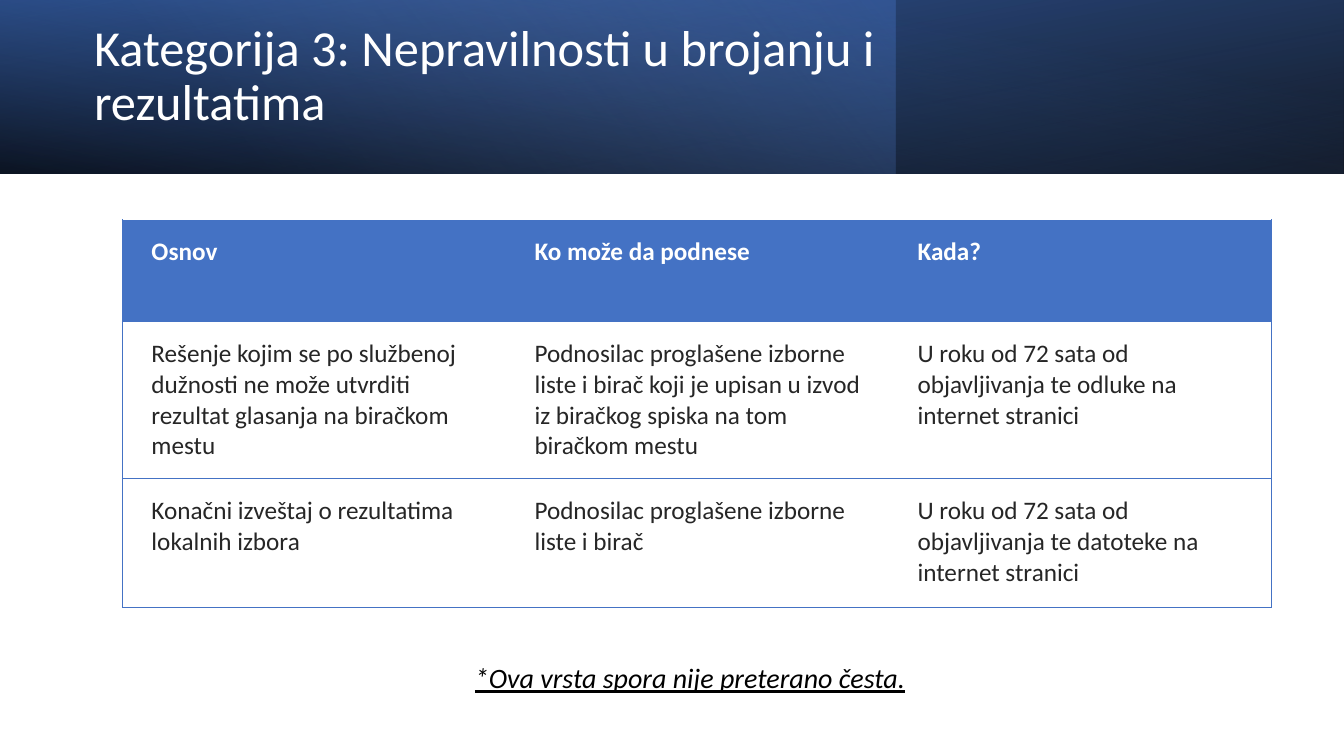
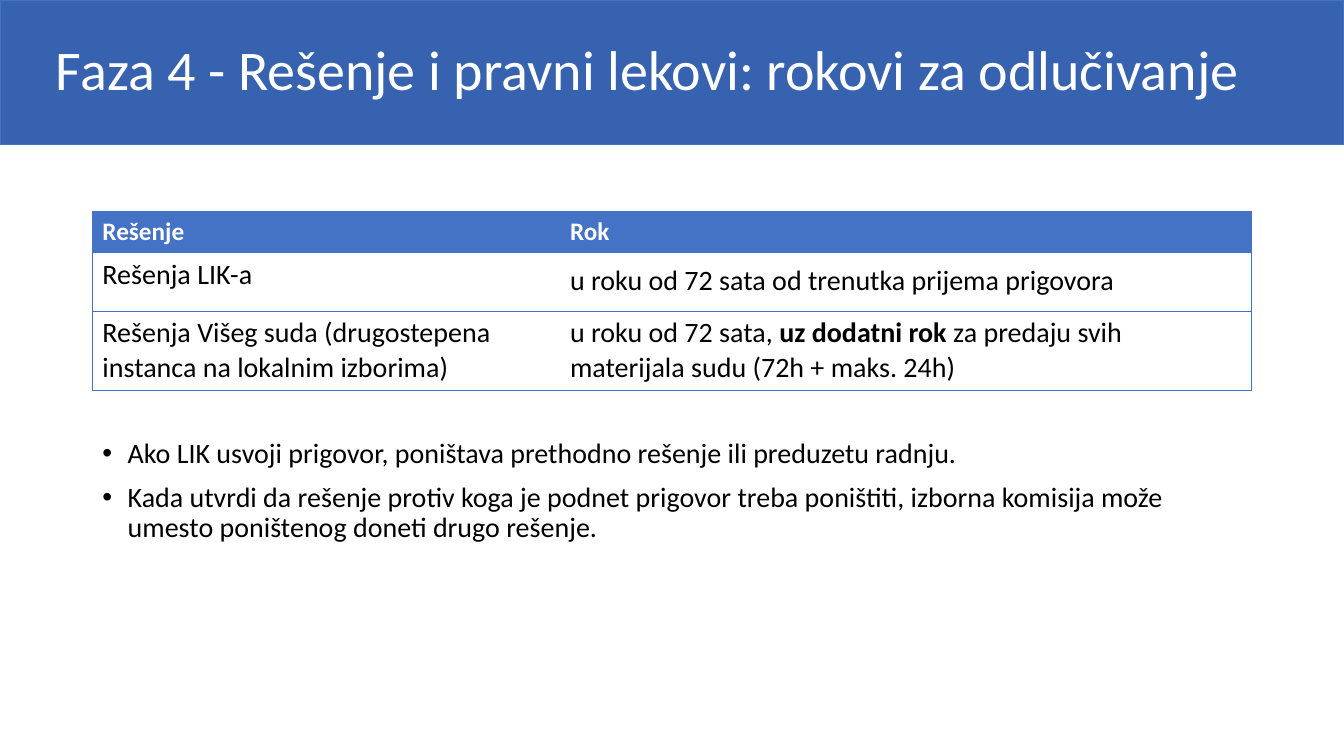
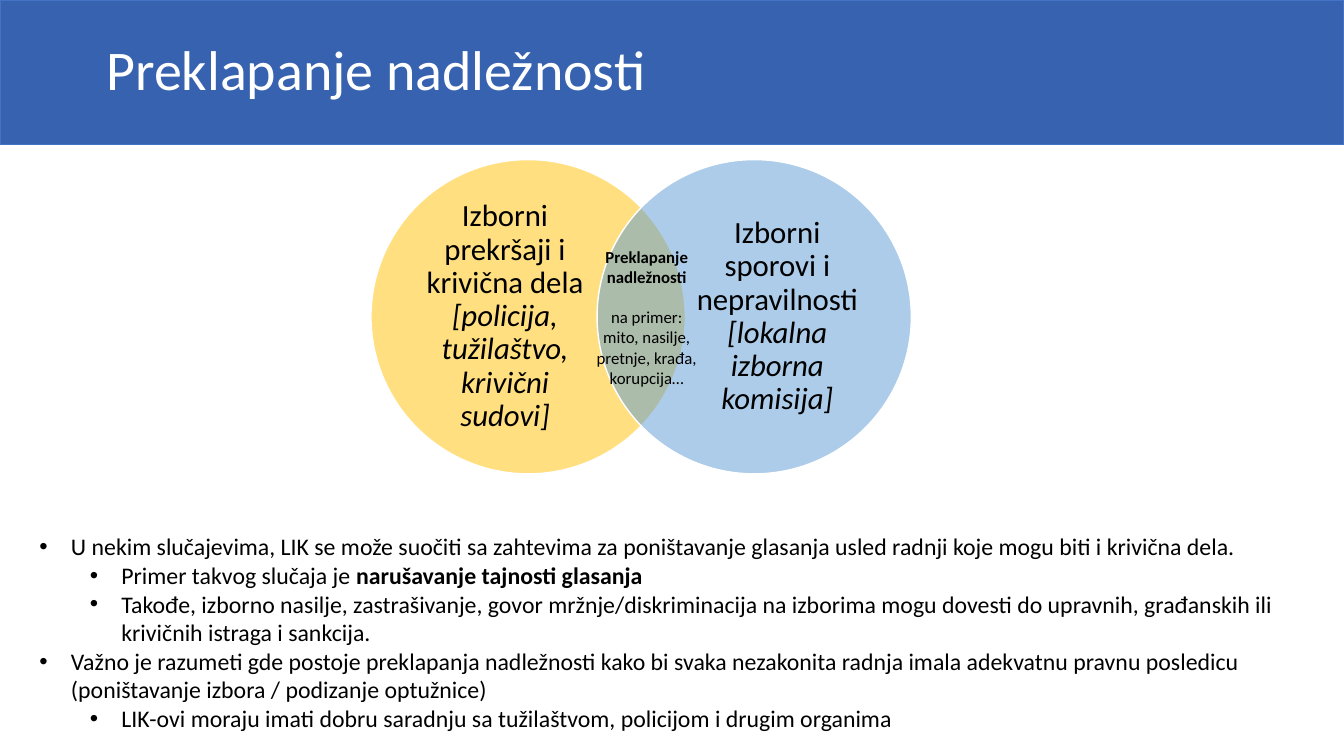
"""Builds three slides on election disputes: two deadline tables and one overlap diagram."""
from dataclasses import dataclass

from lxml.etree import SubElement
from pptx import Presentation
from pptx.dml.color import RGBColor
from pptx.enum.shapes import MSO_SHAPE
from pptx.enum.text import MSO_ANCHOR, MSO_AUTO_SIZE, PP_ALIGN
from pptx.oxml import parse_xml
from pptx.oxml.ns import nsdecls, qn
from pptx.util import Pt


@dataclass(frozen=True)
class Theme:
    font: str = "Calibri"
    white: str = "FFFFFF"
    black: str = "000000"
    ink: str = "262626"
    accent: str = "4472C4"
    band: str = "3762AF"
    navy: str = "2F5597"
    pale: str = "8FAADC"
    gold: str = "FFC000"
    sky: str = "5B9BD5"
    title: int = 40
    long_title: int = 36
    venn: int = 22
    body: int = 20
    table: int = 18
    list: int = 17
    small: int = 12


theme = Theme()


def write(paragraph, runs, size, color=theme.black, align=PP_ALIGN.LEFT,
          spacing=1.0, before=0, left=None, hanging=0):
    paragraph.alignment = align
    paragraph.line_spacing = spacing
    paragraph.space_before = Pt(before)
    paragraph.space_after = Pt(0)
    if left is not None:
        properties = paragraph._p.get_or_add_pPr()
        properties.set("marL", str(Pt(left)))
        properties.set("indent", str(Pt(-hanging)))
        if hanging:
            SubElement(properties, qn("a:buFont")).set("typeface", "Arial")
            SubElement(properties, qn("a:buChar")).set("char", "•")
        else:
            SubElement(properties, qn("a:buNone"))
    for text, style in runs:
        run = paragraph.add_run()
        run.text = text
        run.font.name = theme.font
        run.font.size = Pt(size)
        run.font.color.rgb = RGBColor.from_string(color)
        run.font.bold = "b" in style
        run.font.italic = "i" in style
        run.font.underline = "u" in style


def add_grid(slide, left, top, widths, heights, rows, size, color, insets):
    table = slide.shapes.add_table(
        len(rows), len(widths), Pt(left), Pt(top), Pt(sum(widths)), Pt(sum(heights))).table
    table.horz_banding = False
    for column, width in zip(table.columns, widths):
        column.width = Pt(width)
    for r, (row, height) in enumerate(zip(rows, heights)):
        table.rows[r].height = Pt(height)
        for c, (runs, spacing) in enumerate(row):
            cell = table.cell(r, c)
            cell.margin_left, cell.margin_top, cell.margin_right, cell.margin_bottom = map(Pt, insets)
            cell.fill.solid()
            cell.fill.fore_color.rgb = RGBColor.from_string(theme.white if r else theme.accent)
            write(cell.text_frame.paragraphs[0], runs, size if r else theme.table,
                  color if r else theme.white, spacing=spacing)
            visible = {"L": c == 0, "R": c == len(widths) - 1, "T": True, "B": True}
            for position, (side, shown) in enumerate(visible.items()):
                paint = (f'<a:solidFill><a:srgbClr val="{theme.accent}"/></a:solidFill>'
                         if shown else "<a:noFill/>")
                cell._tc.get_or_add_tcPr().insert(position, parse_xml(
                    f'<a:ln{side} {nsdecls("a")} w="{Pt(0.5)}">{paint}</a:ln{side}>'))


deck = Presentation()
deck.slide_width, deck.slide_height = Pt(960), Pt(540)

headings = [
    ("Kategorija 3: Nepravilnosti u brojanju i rezultatima", theme.long_title,
     (60, 17, 743, 76), (7.2, 60), False, (332, 451, 390, 69)),
    ("Faza 4 - Rešenje i pravni lekovi: rokovi za odlučivanje", theme.title,
     (0, 0, 960, 103.5), (40, 7.2), True, (66, 310, 828, 230)),
    ("Preklapanje nadležnosti", theme.title,
     (0, 0, 960, 103.5), (76, 7.2), True, (21, 376.5, 927, 151)),
]
slides = []
for wording, size, title_box, (inset_left, inset_right), banded, body_box in headings:
    slide = deck.slides.add_slide(deck.slide_layouts[1])
    slides.append(slide)
    for placeholder, box in zip(slide.placeholders, (title_box, body_box)):
        placeholder.left, placeholder.top, placeholder.width, placeholder.height = map(Pt, box)
        placeholder.text_frame.auto_size = MSO_AUTO_SIZE.NONE
        placeholder.text_frame.word_wrap = True
    title = slide.shapes.title
    heading = title.text_frame
    heading.vertical_anchor = MSO_ANCHOR.MIDDLE
    heading.margin_left, heading.margin_right = Pt(inset_left), Pt(inset_right)
    heading.margin_top = heading.margin_bottom = 0
    write(heading.paragraphs[0], [(wording, "")], size, theme.white, spacing=0.9)
    if banded:
        title.fill.solid()
        title.fill.fore_color.rgb = RGBColor.from_string(theme.band)
        title.line.color.rgb = RGBColor.from_string(theme.accent)
        title.line.width = Pt(0.75)

counting, deadlines, overlap = slides

header_layers = [
    (960, 180, True, 100, [(0, theme.black, 96), (100, theme.navy, 100)]),
    (640, 0, False, 140, [(0, theme.accent, 41), (74, theme.pale, 0)]),
    (960, 0, True, 260, [(0, theme.black, 63), (78, theme.accent, 15)]),
]
for width, rotation, flipped, angle, stops in header_layers:
    layer = counting.shapes.add_shape(MSO_SHAPE.RECTANGLE, 0, 0, Pt(width), Pt(124))
    layer.shadow.inherit = False
    layer.line.fill.background()
    layer.rotation = rotation
    properties = layer.element.spPr
    if flipped:
        properties.find(qn("a:xfrm")).set("flipH", "1")
    stop_list = "".join(
        f'<a:gs pos="{place * 1000}"><a:srgbClr val="{color}">'
        f'<a:alpha val="{opacity * 1000}"/></a:srgbClr></a:gs>'
        for place, color, opacity in stops)
    properties.find(qn("a:prstGeom")).addnext(parse_xml(
        f'<a:gradFill {nsdecls("a")} rotWithShape="1"><a:gsLst>{stop_list}</a:gsLst>'
        f'<a:lin ang="{angle * 60000}" scaled="0"/></a:gradFill>'))
    counting.shapes.title.element.addprevious(layer.element)

grounds = [
    ["Osnov", "Ko može da podnese", "Kada?"],
    ["Rešenje kojim se po službenoj dužnosti ne može utvrditi rezultat glasanja na biračkom mestu",
     "Podnosilac proglašene izborne liste i birač koji je upisan u izvod iz biračkog spiska na tom "
     "biračkom mestu",
     "U roku od 72 sata od objavljivanja te odluke na internet stranici"],
    ["Konačni izveštaj o rezultatima lokalnih izbora",
     "Podnosilac proglašene izborne liste i birač",
     "U roku od 72 sata od objavljivanja te datoteke na internet stranici"],
]
ground_rows = [[([(text, "" if r else "b")], 1.0) for text in row] for r, row in enumerate(grounds)]
add_grid(counting, 87.3, 157, [273.6] * 3, [72.7, 112, 91.5], ground_rows,
         theme.table, theme.ink, (20.9, 12.2, 12.2, 12.2))
remark = counting.placeholders[1].text_frame
remark.vertical_anchor = MSO_ANCHOR.MIDDLE
write(remark.paragraphs[0], [("*Ova vrsta spora nije preterano česta.", "iu")],
      theme.body, spacing=0.9, before=10, left=0)

deadline_rows = [
    [([("Rešenje", "b")], 1.0), ([("Rok", "b")], 1.0)],
    [([("Rešenja LIK-a", "")], 1.0),
     ([("u roku od 72 sata od trenutka prijema prigovora", "")], 1.2)],
    [([("Rešenja Višeg suda (drugostepena instanca na lokalnim izborima)", "")], 1.0),
     ([("u roku od 72 sata, ", ""), ("uz dodatni rok ", "b"),
       ("za predaju svih materijala sudu (72h + maks. 24h)", "")], 1.0)],
]
add_grid(deadlines, 66, 151, [334, 494], [29.2, 42, 56.4], deadline_rows,
         theme.body, theme.black, (7.2, 3.6, 7.2, 3.6))

rulings = [
    (0, [("Ako LIK usvoji prigovor, poništava prethodno rešenje ili preduzetu radnju.", "")]),
    (0, [("Kada utvrdi da rešenje protiv koga je podnet prigovor treba poništiti, izborna komisija "
          "može umesto poništenog doneti drugo rešenje.", "")]),
]
cases = [
    (0, [("U nekim slučajevima, LIK se može suočiti sa zahtevima za poništavanje glasanja usled "
          "radnji koje mogu biti i krivična dela.", "")]),
    (1, [("Primer takvog slučaja je ", ""), ("narušavanje tajnosti glasanja", "b")]),
    (1, [("Takođe, izborno nasilje, zastrašivanje, govor mržnje/diskriminacija na izborima mogu "
          "dovesti do upravnih, građanskih ili krivičnih istraga i sankcija.", "")]),
    (0, [("Važno je razumeti gde postoje preklapanja nadležnosti kako bi svaka nezakonita radnja "
          "imala adekvatnu pravnu posledicu (poništavanje izbora / podizanje optužnice)", "")]),
    (1, [("LIK-ovi moraju imati dobru saradnju sa tužilaštvom, policijom i drugim organima", "")]),
]
for slide, points, size, spacing, before, hanging in [
        (deadlines, rulings, theme.body, 0.9, 10, 18),
        (overlap, cases, theme.list, 1.0, 0, 22.5)]:
    bullets = slide.placeholders[1].text_frame
    for index, (level, runs) in enumerate(points):
        point = bullets.add_paragraph() if index else bullets.paragraphs[0]
        point.level = level
        write(point, runs, size, spacing=spacing, before=before,
              left=hanging + 36 * level, hanging=hanging)

domains = [
    (265, 296, theme.gold,
     [("Izborni prekršaji i krivična dela ", ""), ("[policija, tužilaštvo, krivični sudovi]", "i")]),
    (426.5, 490.5, theme.sky,
     [("Izborni sporovi i nepravilnosti ", ""), ("[lokalna izborna komisija]", "i")]),
]
for circle_left, label_left, color, runs in domains:
    circle = overlap.shapes.add_shape(
        MSO_SHAPE.OVAL, Pt(circle_left), Pt(114), Pt(224.5), Pt(224.5))
    circle.shadow.inherit = False
    circle.fill.solid()
    circle.fill.fore_color.rgb = RGBColor.from_string(color)
    tint = circle.element.spPr.find(qn("a:solidFill")).find(qn("a:srgbClr"))
    SubElement(tint, qn("a:alpha")).set("val", "50000")
    circle.line.color.rgb = RGBColor.from_string(theme.white)
    circle.line.width = Pt(1)
    label = overlap.shapes.add_textbox(Pt(label_left), Pt(140.5), Pt(129.5), Pt(171.5)).text_frame
    label.word_wrap = True
    label.vertical_anchor = MSO_ANCHOR.MIDDLE
    label.margin_left = label.margin_right = label.margin_top = label.margin_bottom = 0
    write(label.paragraphs[0], runs, theme.venn, align=PP_ALIGN.CENTER, spacing=0.9)

shared = overlap.shapes.add_textbox(Pt(420.5), Pt(173), Pt(83), Pt(114.5)).text_frame
shared.word_wrap = True
shared.margin_left = shared.margin_right = Pt(5)
shared.margin_top = shared.margin_bottom = Pt(2.9)
write(shared.paragraphs[0], [("Preklapanje nadležnosti", "b")], theme.small, align=PP_ALIGN.CENTER)
write(shared.add_paragraph(), [("na primer: mito, nasilje, pretnje, krađa, korupcija…", "")],
      theme.small, align=PP_ALIGN.CENTER, before=14.6)

deck.save("out.pptx")
